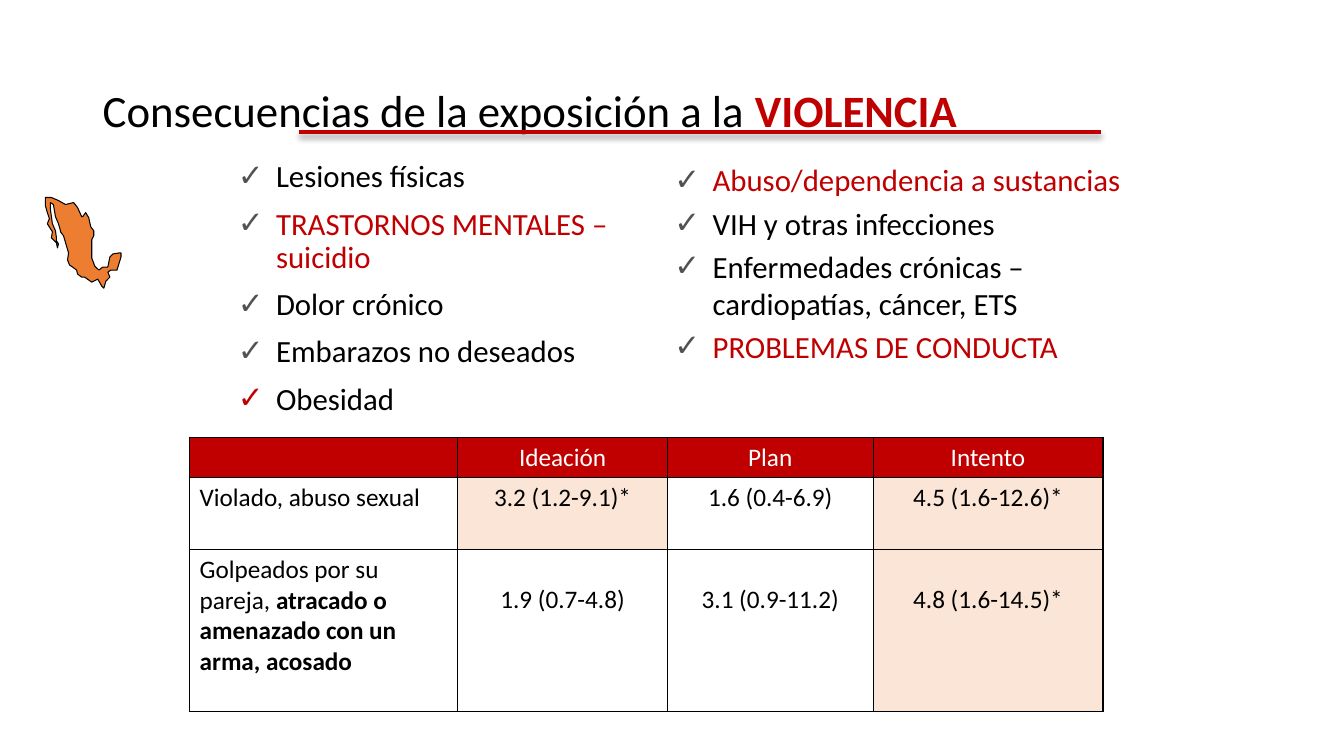
"""Build a slide on the consequences of exposure to violence."""
from lxml import etree
from pptx import Presentation
from pptx.dml.color import RGBColor
from pptx.enum.shapes import MSO_CONNECTOR
from pptx.enum.text import MSO_ANCHOR, PP_ALIGN
from pptx.oxml import parse_xml
from pptx.oxml.ns import qn
from pptx.util import Inches, Pt

MIDDLE, TOP = MSO_ANCHOR.MIDDLE, MSO_ANCHOR.TOP
LEFT, CENTER = PP_ALIGN.LEFT, PP_ALIGN.CENTER
STRAIGHT = MSO_CONNECTOR.STRAIGHT
RED = RGBColor(0xC0, 0x00, 0x00)
BLACK = RGBColor(0x00, 0x00, 0x00)
WHITE = RGBColor(0xFF, 0xFF, 0xFF)
GRAY = RGBColor(0x52, 0x52, 0x52)
PEACH = RGBColor(0xFB, 0xE5, 0xD6)
ORANGE = RGBColor(0xED, 0x7D, 0x31)
NAMESPACE = 'xmlns:a="http://schemas.openxmlformats.org/drawingml/2006/main"'


def add_run(paragraph, text, size, color, bold=False):
    """Append a formatted run to a paragraph."""
    run = paragraph.add_run()
    run.text = text
    font_format = {"name": "Calibri", "size": Pt(size), "bold": bold}
    for name, value in font_format.items():
        setattr(run.font, name, value)
    run.font.color.rgb = color


def add_text_frame(box, anchor):
    """Add a wrapping text box and return its text frame."""
    text_frame = slide.shapes.add_textbox(*map(Inches, box)).text_frame
    text_frame.word_wrap = True
    text_frame.vertical_anchor = anchor
    return text_frame


presentation = Presentation()
presentation.slide_width = Inches(13.33)
presentation.slide_height = Inches(7.5)
slide = presentation.slides.add_slide(presentation.slide_layouts[6])

title = add_text_frame((0.92, 0.4, 11.5, 1.45), MIDDLE).paragraphs[0]
title.line_spacing = 0.9
add_run(title, "Consecuencias de la exposición a la ", 32, BLACK)
add_run(title, "VIOLENCIA", 32, RED, True)

left_list = [
    ("Lesiones físicas", BLACK, GRAY),
    ("TRASTORNOS MENTALES –suicidio", RED, GRAY),
    ("Dolor crónico", BLACK, GRAY),
    ("Embarazos no deseados", BLACK, GRAY),
    ("Obesidad", BLACK, RED),
]
right_list = [
    ("Abuso/dependencia a sustancias", RED, GRAY),
    ("VIH y otras infecciones", BLACK, GRAY),
    ("Enfermedades crónicas – cardiopatías, cáncer, ETS", BLACK, GRAY),
    ("PROBLEMAS DE CONDUCTA", RED, GRAY),
]
columns = [
    ((2.26, 1.55, 4.09, 2.66), left_list, 0.9, 10),
    ((6.59, 1.55, 4.72, 2.17), right_list, 1.0, 4.4),
]
for box, items, line_spacing, space_before in columns:
    text_frame = add_text_frame(box, TOP)
    for index, (text, color, bullet_color) in enumerate(items):
        paragraph = text_frame.add_paragraph() if index else text_frame.paragraphs[0]
        paragraph.line_spacing = line_spacing
        paragraph.space_before = Pt(space_before)
        add_run(paragraph, text, 22, color)
        properties = paragraph._p.get_or_add_pPr()
        properties.set("marL", str(Inches(0.38)))
        properties.set("indent", str(Inches(-0.38)))
        bullet = etree.SubElement(properties, qn("a:buClr"))
        etree.SubElement(bullet, qn("a:srgbClr"), val=str(bullet_color))
        etree.SubElement(properties, qn("a:buFont"), typeface="Calibri")
        etree.SubElement(properties, qn("a:buChar"), char="✓")

rule = slide.shapes.add_connector(
    STRAIGHT, Inches(2.97), Inches(1.31), Inches(10.92), Inches(1.31))
rule.line.color.rgb = RED
rule.line.width = Pt(3)
rule._element.spPr.append(parse_xml(
    f'<a:effectLst {NAMESPACE}><a:outerShdw blurRad="{Pt(4)}" dist="{Pt(3)}" '
    'dir="5400000" rotWithShape="0"><a:srgbClr val="000000">'
    '<a:alpha val="40000"/></a:srgbClr></a:outerShdw></a:effectLst>'))

risk_rows = [
    ["", "Ideación", "Plan", "Intento"],
    ["Violado, abuso sexual", "3.2 (1.2-9.1)*", "1.6 (0.4-6.9)", "4.5 (1.6-12.6)*"],
    ["Golpeados por su pareja, ", "1.9 (0.7-4.8)", "3.1 (0.9-11.2)", "4.8 (1.6-14.5)*"],
]
table = slide.shapes.add_table(
    3, 4, Inches(1.88), Inches(4.34), Inches(9.06), Inches(2.71)).table
for column, width in zip(table.columns, (2.66, 2.08, 2.04, 2.28)):
    column.width = Inches(width)
for row, height in zip(table.rows, (0.39, 0.71, 1.61)):
    row.height = Inches(height)
for row_index, row_texts in enumerate(risk_rows):
    for column_index, text in enumerate(row_texts):
        cell = table.cell(row_index, column_index)
        for side in ("lnL", "lnR", "lnT", "lnB"):
            cell._tc.get_or_add_tcPr().append(parse_xml(
                f'<a:{side} {NAMESPACE} w="{Pt(1)}"><a:solidFill>'
                f'<a:srgbClr val="{BLACK}"/></a:solidFill></a:{side}>'))
        if row_index == 0 or text.endswith("*"):
            cell.fill.solid()
            cell.fill.fore_color.rgb = PEACH if row_index else RED
        else:
            cell.fill.background()
        paragraph = cell.text_frame.paragraphs[0]
        paragraph.alignment = CENTER if column_index else LEFT
        if text:
            add_run(paragraph, text, 18, BLACK if row_index else WHITE)
        if row_index == 2 and column_index:
            cell.margin_top = Inches(0.35)
add_run(table.cell(2, 0).text_frame.paragraphs[0],
        "atracado o amenazado con un arma, acosado", 18, BLACK, True)

map_outline = [
    (110, 268), (107, 270), (109, 275), (105, 279), (103, 286), (101, 284),
    (97, 277), (91, 280), (84, 275), (81, 275), (77, 272), (76, 268),
    (72, 265), (69, 263), (67, 258), (68, 251), (63, 234), (60, 230),
    (60, 229), (58, 222), (55, 215), (53, 203), (50, 201), (50, 208),
    (52, 222), (55, 229), (56, 236), (56, 239), (58, 242), (57, 246),
    (56, 241), (51, 236), (52, 230), (47, 222), (49, 217), (47, 211),
    (45, 204), (45, 196), (51, 196), (58, 199), (65, 203), (73, 201),
    (77, 206), (81, 215), (82, 215), (85, 211), (88, 216), (90, 225),
    (93, 229), (93, 234), (91, 238), (91, 256), (94, 264), (98, 268),
    (102, 265), (107, 265), (109, 255), (112, 252), (118, 251), (120, 251),
    (120, 255), (117, 265), (116, 268), (112, 268),
]
builder = slide.shapes.build_freeform(*map_outline[0], scale=Inches(0.01))
builder.add_line_segments(map_outline[1:], close=True)
mexico_map = builder.convert_to_shape()
mexico_map.shadow.inherit = False
mexico_map.fill.solid()
mexico_map.fill.fore_color.rgb = ORANGE
mexico_map.line.color.rgb = BLACK
mexico_map.line.width = Pt(0.75)

presentation.save("out.pptx")
